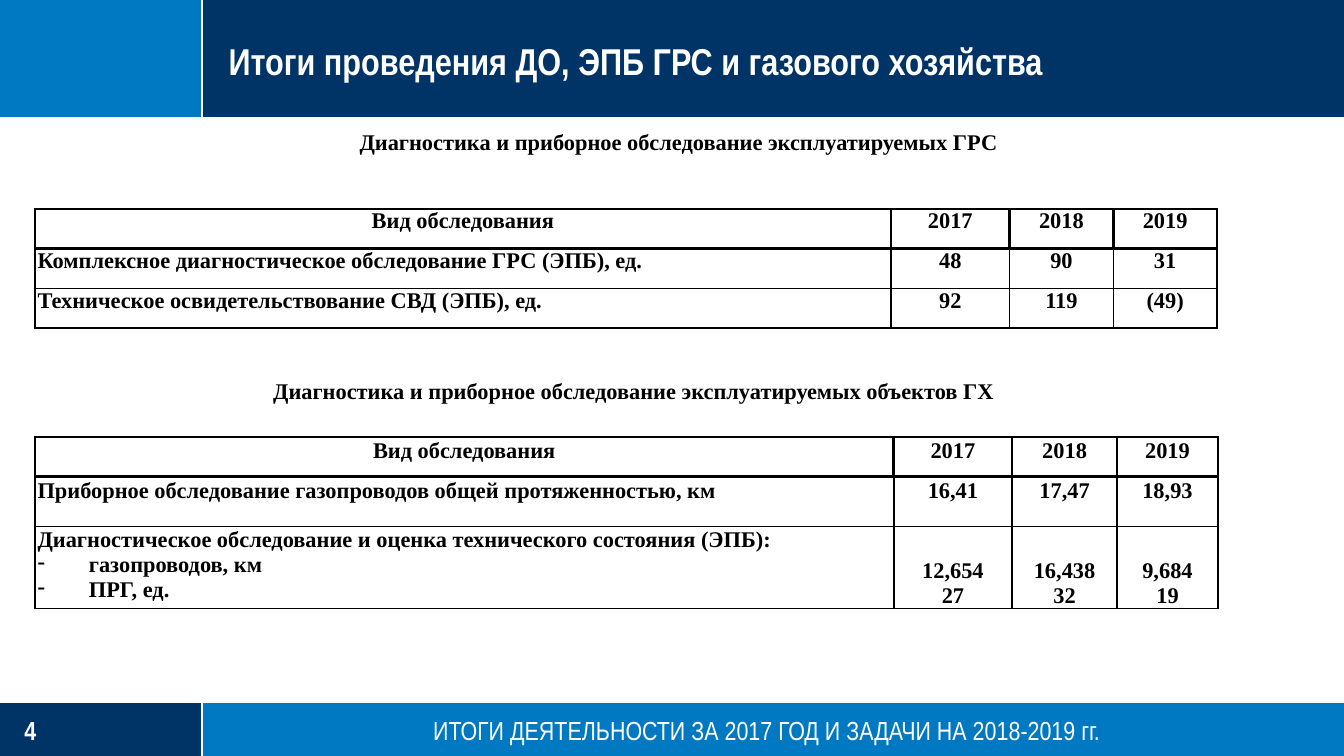
from lxml import etree
from pptx import Presentation
from pptx.dml.color import RGBColor
from pptx.enum.shapes import MSO_CONNECTOR as Connector, MSO_SHAPE as Shape
from pptx.enum.text import MSO_ANCHOR as Anchor, PP_ALIGN as Align
from pptx.oxml.ns import qn
from pptx.util import Cm, Pt

WIDTH, HEIGHT = 25.4, 14.29
SIDE_WIDTH = 3.82
NAVY, BLUE, WHITE, BLACK = "003366", "0079C2", "FFFFFF", "000000"
SANS, SERIF = "Arial Narrow", "Times New Roman"
BULLET = "- "


def color(value):
    return RGBColor.from_string(value)


def add_text(paragraph, text, size, font, fill, bold=True):
    run = paragraph.add_run()
    run.text = text
    run.font.size = Pt(size)
    run.font.name = font
    run.font.bold = bold
    run.font.color.rgb = color(fill)


def add_box(slide, box, text, size, font, fill, bold=True,
            align=Align.LEFT, insets=(0, 0, 0, 0)):
    shape = slide.shapes.add_textbox(*map(Cm, box))
    frame = shape.text_frame
    frame.word_wrap = True
    frame.vertical_anchor = Anchor.MIDDLE
    (frame.margin_left, frame.margin_top,
     frame.margin_right, frame.margin_bottom) = map(Cm, insets)
    paragraph = frame.paragraphs[0]
    paragraph.alignment = align
    add_text(paragraph, text, size, font, fill, bold)


def add_rectangle(slide, box, fill):
    shape = slide.shapes.add_shape(Shape.RECTANGLE, *map(Cm, box))
    shape.shadow.inherit = False
    shape.fill.solid()
    shape.fill.fore_color.rgb = color(fill)
    shape.line.fill.background()


def add_rule(slide, *ends):
    line = slide.shapes.add_connector(Connector.STRAIGHT, *map(Cm, ends))
    line.line.color.rgb = color(WHITE)
    line.line.width = Pt(1.25)
    etree.SubElement(line._element.spPr, qn("a:effectLst"))


def add_band(slide, box, side_fill, main_fill, rule_y):
    """Full-width band with a side block and white separators."""
    left, top, width, height = box
    add_rectangle(slide, box, main_fill)
    add_rectangle(slide, (left, top, SIDE_WIDTH, height), side_fill)
    add_rule(slide, left, rule_y, left + width, rule_y)
    add_rule(slide, SIDE_WIDTH, top, SIDE_WIDTH, top + height)


def add_header(slide, box):
    add_band(slide, box, BLUE, NAVY, 2.24)
    add_box(slide, (4.32, 0.72, 20.35, 0.86),
            "Итоги проведения ДО, ЭПБ ГРС и газового хозяйства",
            20, SANS, WHITE)


def add_footer(slide, box):
    add_band(slide, box, NAVY, BLUE, 13.26)
    top = box[1] + 0.21
    add_box(slide, (0.46, top, 2.57, 0.61), "4", 14, SANS, WHITE)
    add_box(slide, (4.32, top, 20.35, 0.61),
            "ИТОГИ ДЕЯТЕЛЬНОСТИ ЗА 2017 ГОД И ЗАДАЧИ НА 2018-2019 гг.",
            14, SANS, WHITE, bold=False, align=Align.CENTER)


def add_caption(slide, box, text):
    add_box(slide, box, text, 12, SERIF, BLACK, align=Align.CENTER,
            insets=(0.51, 0.13, 0.25, 0))


def set_borders(cell, widths):
    properties = cell._tc.get_or_add_tcPr()
    for index, (side, width) in enumerate(zip("LRTB", widths)):
        line = etree.Element(qn("a:ln" + side), w=str(Pt(width)))
        fill = etree.SubElement(line, qn("a:solidFill"))
        etree.SubElement(fill, qn("a:srgbClr"), val=BLACK)
        properties.insert(index, line)


def add_bullet(paragraph):
    properties = paragraph._p.get_or_add_pPr()
    properties.set("marL", str(Cm(0.97)))
    properties.set("indent", str(-Cm(0.97)))
    etree.SubElement(properties, qn("a:buChar"), char="-")


def fill_cell(cell, text, centered, widths, top_inset):
    cell.fill.background()
    set_borders(cell, widths)
    cell.margin_left = cell.margin_right = Cm(0.05)
    cell.margin_top, cell.margin_bottom = Cm(top_inset), 0
    lines = text.split("\n")
    # Stacked values line up with the last lines of the label
    stacked = centered and len(lines) > 1
    cell.vertical_anchor = Anchor.BOTTOM if stacked else Anchor.TOP
    for index, line in enumerate(lines):
        frame = cell.text_frame
        paragraph = frame.add_paragraph() if index else frame.paragraphs[0]
        paragraph.alignment = Align.CENTER if centered else Align.LEFT
        if line.startswith(BULLET):
            add_bullet(paragraph)
        add_text(paragraph, line.removeprefix(BULLET), 12, SERIF, BLACK)


def add_survey_table(slide, origin, columns, heights, rows, top_inset=0):
    table = slide.shapes.add_table(
        len(rows), len(columns), *map(Cm, origin),
        Cm(sum(columns)), Cm(sum(heights))).table
    table.first_row = table.horz_banding = False
    for column, width in zip(table.columns, columns):
        column.width = Cm(width)
    for row, height in zip(table.rows, heights):
        row.height = Cm(height)
    for r, values in enumerate(rows):
        # Left, right, top, bottom; the header row is heavier
        widths = [(1.5,) * 4, (1, 1, 1.5, 1), (1,) * 4][min(r, 2)]
        for c, value in enumerate(values):
            fill_cell(table.cell(r, c), value, r == 0 or c > 0,
                      widths, top_inset)


def main():
    presentation = Presentation()
    presentation.slide_width, presentation.slide_height = Cm(WIDTH), Cm(HEIGHT)
    slide = presentation.slides.add_slide(presentation.slide_layouts[6])

    add_header(slide, (0, 0, WIDTH, 2.22))
    add_footer(slide, (0, 13.28, WIDTH, 1.01))
    heading = ("Вид обследования", "2017", "2018", "2019")

    # Distribution stations
    add_caption(slide, (0, 2.29, WIDTH, 0.66),
                "Диагностика и приборное обследование эксплуатируемых ГРС")
    add_survey_table(
        slide, (0.66, 3.95), (16.18, 2.24, 1.96, 1.96), (0.75,) * 3,
        [heading,
         ("Комплексное диагностическое обследование ГРС (ЭПБ), ед.",
          "48", "90", "31"),
         ("Техническое освидетельствование СВД (ЭПБ), ед.",
          "92", "119", "(49)")])

    # Gas facilities
    add_caption(slide, (0.66, 6.99, 22.38, 0.66),
                "Диагностика и приборное обследование "
                "эксплуатируемых объектов ГХ")
    add_survey_table(
        slide, (0.66, 8.26), (16.23, 2.24, 1.98, 1.91), (0.75, 0.94, 1.43),
        [heading,
         ("Приборное обследование газопроводов общей протяженностью, км",
          "16,41", "17,47", "18,93"),
         ("Диагностическое обследование и оценка технического состояния "
          "(ЭПБ):\n- газопроводов, км\n- ПРГ, ед.",
          "12,654\n27", "16,438\n32", "9,684\n19")],
        top_inset=0.03)

    presentation.save("out.pptx")


if __name__ == "__main__":
    main()
